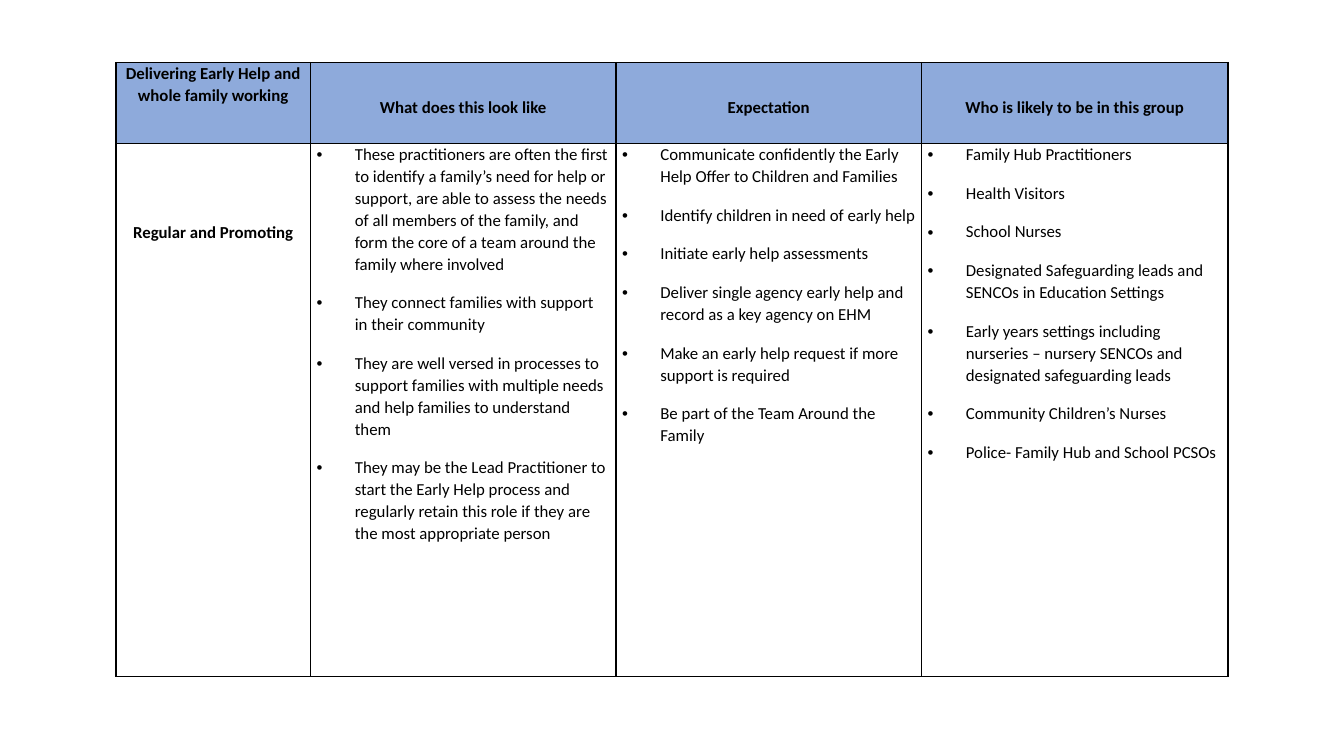
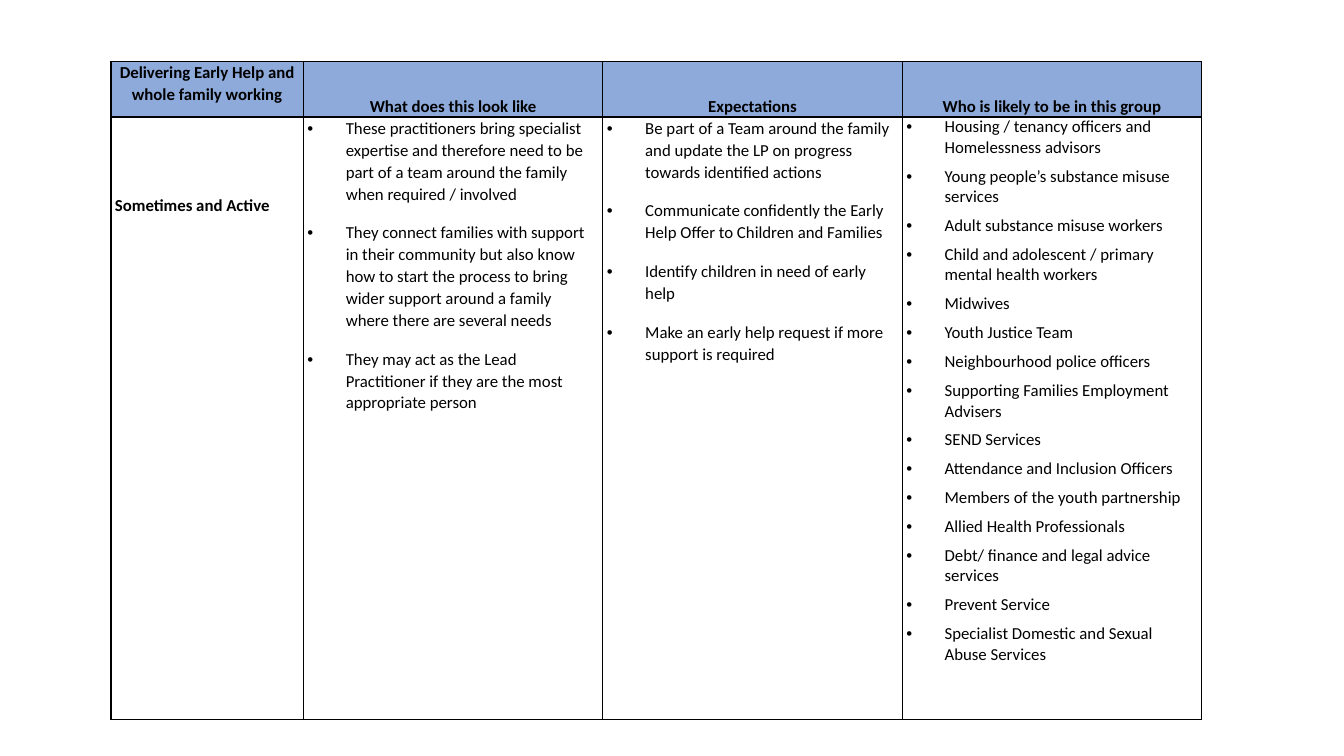
from lxml.etree import SubElement
from pptx import Presentation
from pptx.dml.color import RGBColor
from pptx.enum.text import PP_ALIGN
from pptx.oxml import parse_xml
from pptx.oxml.ns import nsdecls, qn
from pptx.util import Inches, Pt

HEADER_BLUE = "8EAADB"
BLACK = "000000"
FONT = "Calibri"
TEXT_SIZE = 12
BULLET_INDENT = 0.38
HEADING_DROP = 0.33
LABEL_DROP = 0.77
LOOSE = {"line": 1.07, "before": 6, "after": 6}
TIGHT = {"line": 1.0, "before": 6, "after": 0}
HEADING = {"line": 1.07, "before": 0, "after": 8}

TOPIC = "Delivering Early Help and whole family working"

PAGES = [
    {
        "origin": (1.15, 0.62),
        "widths": (1.93, 3.03, 3.03, 3.04),
        "heights": (0.8, 5.29),
        "side_margin": 0.06,
        "label": "Regular and Promoting",
        "label_align": PP_ALIGN.CENTER,
        "columns": [
            ("What does this look like", LOOSE, [
                "These practitioners are often the first to identify a family’s need for help or support, "
                "are able to assess the needs of all members of the family, and form the core of a team "
                "around the family where involved",
                "They connect families with support in their community",
                "They are well versed in processes to support families with multiple needs and help "
                "families to understand them",
                "They may be the Lead Practitioner to start the Early Help process and regularly retain "
                "this role if they are the most appropriate person",
            ]),
            ("Expectation", LOOSE, [
                "Communicate confidently the Early Help Offer to Children and Families",
                "Identify children in need of early help",
                "Initiate early help assessments",
                "Deliver single agency early help and record as a key agency on EHM",
                "Make an early help request if more support is required",
                "Be part of the Team Around the Family",
            ]),
            ("Who is likely to be in this group", LOOSE, [
                "Family Hub Practitioners",
                "Health Visitors",
                "School Nurses",
                "Designated Safeguarding leads and SENCOs in Education Settings",
                "Early years settings including nurseries – nursery SENCOs and designated safeguarding leads",
                "Community Children’s Nurses",
                "Police- Family Hub and School PCSOs",
            ]),
        ],
    },
    {
        "origin": (1.1, 0.61),
        "widths": (1.91, 2.97, 2.97, 2.97),
        "heights": (0.55, 5.98),
        "side_margin": 0.04,
        "label": "Sometimes and Active",
        "label_align": PP_ALIGN.LEFT,
        "columns": [
            ("What does this look like", LOOSE, [
                "These practitioners bring specialist expertise and therefore need to be part of a team "
                "around the family when required / involved",
                "They connect families with support in their community but also know how to start the "
                "process to bring wider support around a family where there are several needs",
                "They may act as the Lead Practitioner if they are the most appropriate person",
            ]),
            ("Expectations", LOOSE, [
                "Be part of a Team around the family and update the LP on progress towards identified actions",
                "Communicate confidently the Early Help Offer to Children and Families",
                "Identify children in need of early help",
                "Make an early help request if more support is required",
            ]),
            ("Who is likely to be in this group", TIGHT, [
                "Housing / tenancy officers and Homelessness advisors",
                "Young people’s substance misuse services",
                "Adult substance misuse workers",
                "Child and adolescent / primary mental health workers",
                "Midwives",
                "Youth Justice Team",
                "Neighbourhood police officers",
                "Supporting Families Employment Advisers",
                "SEND Services",
                "Attendance and Inclusion Officers",
                "Members of the youth partnership",
                "Allied Health Professionals",
                "Debt/ finance and legal advice services",
                "Prevent Service",
                "Specialist Domestic and Sexual Abuse Services",
            ]),
        ],
    },
]


def color(hex_string):
    return RGBColor.from_string(hex_string)


def frame_cell(cell, side_margin, fill=None):
    cell.margin_left = cell.margin_right = Inches(side_margin)
    cell.margin_top = cell.margin_bottom = 0
    if fill:
        cell.fill.solid()
        cell.fill.fore_color.rgb = color(fill)
    else:
        cell.fill.background()
    properties = cell._tc.get_or_add_tcPr()
    for position, side in enumerate(("lnL", "lnR", "lnT", "lnB")):
        properties.insert(position, parse_xml(
            f'<a:{side} {nsdecls("a")} w="{Pt(1)}"><a:solidFill>'
            f'<a:srgbClr val="{BLACK}"/></a:solidFill></a:{side}>'))


def add_bullet(paragraph):
    properties = paragraph._p.get_or_add_pPr()
    properties.set("marL", str(Inches(BULLET_INDENT)))
    properties.set("indent", str(-Inches(BULLET_INDENT)))
    SubElement(properties, qn("a:buFont")).set("typeface", "Arial")
    SubElement(properties, qn("a:buChar")).set("char", "•")


def write(cell, lines, spacing, align=PP_ALIGN.LEFT, bold=False, bullets=False, drop=0):
    cell.margin_top = Inches(drop)
    for number, line in enumerate(lines):
        frame = cell.text_frame
        paragraph = frame.add_paragraph() if number else frame.paragraphs[0]
        paragraph.text = line
        paragraph.alignment = align
        paragraph.line_spacing = spacing["line"]
        paragraph.space_before = Pt(spacing["before"])
        paragraph.space_after = Pt(spacing["after"])
        paragraph.font.name = FONT
        paragraph.font.size = Pt(TEXT_SIZE)
        paragraph.font.bold = bold
        paragraph.font.color.rgb = color(BLACK)
        if bullets:
            add_bullet(paragraph)


def add_page(deck, page):
    slide = deck.slides.add_slide(deck.slide_layouts[6])
    widths, heights = page["widths"], page["heights"]
    left, top = page["origin"]
    grid = slide.shapes.add_table(
        len(heights), len(widths), Inches(left), Inches(top),
        Inches(sum(widths)), Inches(sum(heights))).table
    grid.first_row = grid.horz_banding = False
    for column, width in zip(grid.columns, widths):
        column.width = Inches(width)
    for row, height, fill in zip(grid.rows, heights, (HEADER_BLUE, None)):
        row.height = Inches(height)
        for cell in row.cells:
            frame_cell(cell, page["side_margin"], fill)

    write(grid.cell(0, 0), [TOPIC], HEADING, PP_ALIGN.CENTER, bold=True)
    write(grid.cell(1, 0), [page["label"]], LOOSE, page["label_align"], bold=True, drop=LABEL_DROP)
    for index, (heading, spacing, points) in enumerate(page["columns"], start=1):
        write(grid.cell(0, index), [heading], HEADING, PP_ALIGN.CENTER, bold=True, drop=HEADING_DROP)
        write(grid.cell(1, index), points, spacing, bullets=True)


def main():
    deck = Presentation()
    deck.slide_width = Inches(13.33)
    deck.slide_height = Inches(7.5)
    for page in PAGES:
        add_page(deck, page)
    deck.save("out.pptx")


if __name__ == "__main__":
    main()
